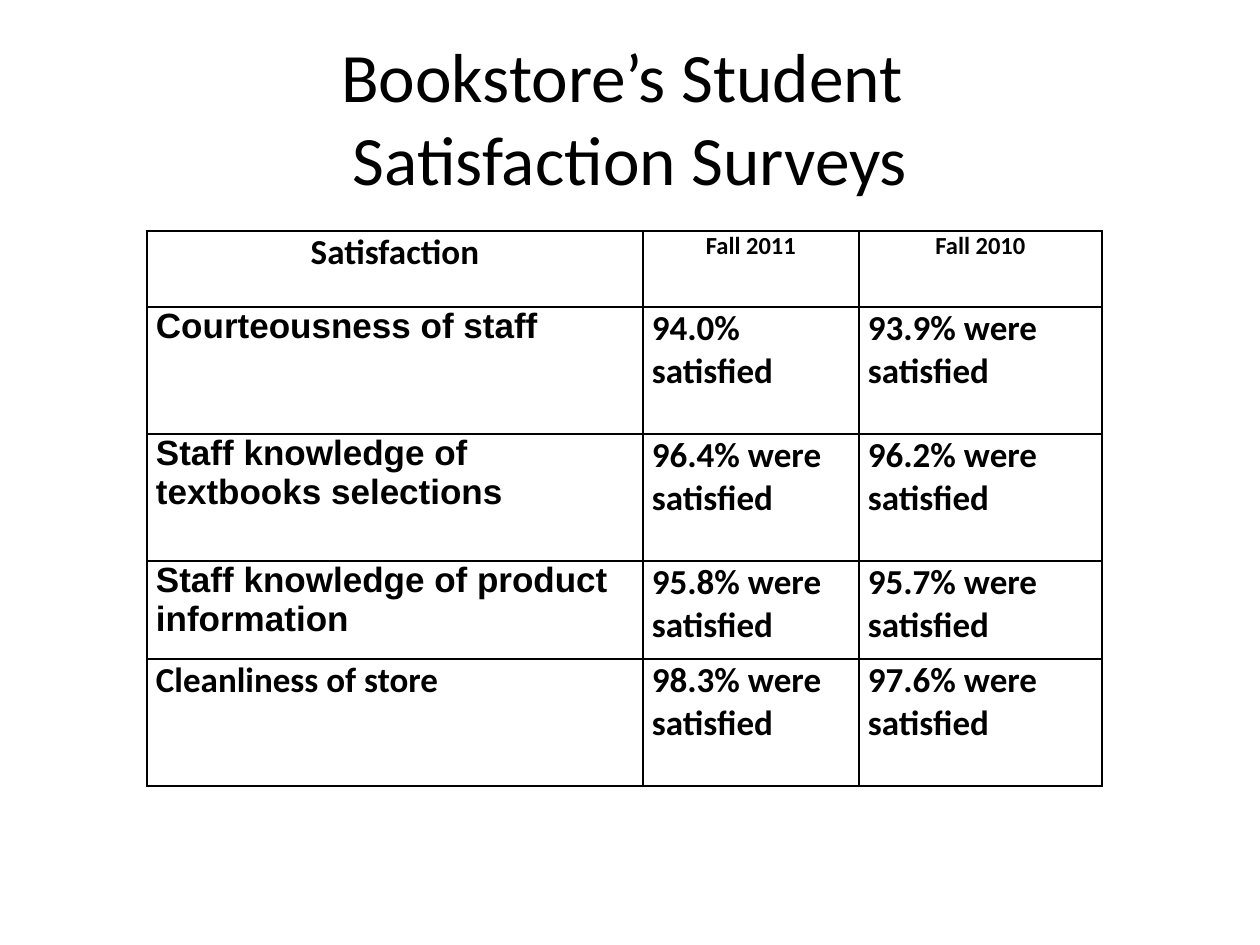
from lxml import etree
from pptx import Presentation, util as u
from pptx.dml.color import RGBColor
from pptx.enum import text as t
from pptx.oxml.ns import qn

# Content
TITLE = "Bookstore’s Student \vSatisfaction Surveys"
HEADER = ("Satisfaction", "Fall 2011", "Fall 2010")
SURVEY = [
    ("Courteousness of staff", "94.0% satisfied", "93.9% were satisfied"),
    ("Staff knowledge of textbooks selections", "96.4% were satisfied", "96.2% were satisfied"),
    ("Staff knowledge of product information", "95.8% were satisfied", "95.7% were satisfied"),
    ("Cleanliness of store", "98.3% were satisfied", "97.6% were satisfied"),
]

# Layout in px, 126 to the inch
PAGE = (1260, 945)
TITLE_BOX = (63, 38, 1134, 157)
TABLE_AT = (147, 231)
COLUMNS = (496, 216, 243)
ROWS = (76, 127, 127, 98, 127)
CELL_MARGINS = {"margin_left": 9, "margin_right": 9, "margin_top": 0, "margin_bottom": 0}
COLORS = {"ink": "000000"}
ARIAL_ROWS = (1, 2, 3)


def px(length):
    return u.Emu(round(length * 914400 / 126))


def style(para, size, font="Calibri", bold=False, align=t.PP_ALIGN.LEFT):
    para.alignment = align
    for span in para.runs:
        for name, value in {"size": u.Pt(size), "name": font, "bold": bold}.items():
            setattr(span.font, name, value)
        span.font.color.rgb = RGBColor.from_string(COLORS["ink"])


def add_borders(cell):
    props = cell._tc.get_or_add_tcPr()
    for position, side in enumerate(("lnL", "lnR", "lnT", "lnB")):
        line = etree.Element(qn(f"a:{side}"), w=str(u.Pt(1)))
        fill = etree.SubElement(line, qn("a:solidFill"))
        etree.SubElement(fill, qn("a:srgbClr"), val=COLORS["ink"])
        props.insert(position, line)


def cell_format(row, column):
    if row == 0:
        return {"size": 14 if column else 20, "align": t.PP_ALIGN.CENTER}
    return {"size": 20, "font": "Arial" if column == 0 and row in ARIAL_ROWS else "Calibri"}


deck = Presentation()
deck.slide_width, deck.slide_height = map(px, PAGE)
page = deck.slides.add_slide(deck.slide_layouts[5])

# Title
title = page.shapes.title
title.left, title.top, title.width, title.height = map(px, TITLE_BOX)
title.text_frame.text = TITLE
title.text_frame.vertical_anchor = t.MSO_ANCHOR.MIDDLE
style(title.text_frame.paragraphs[0], 39.6, align=t.PP_ALIGN.CENTER)

# Survey table
frame = page.shapes.add_table(len(ROWS), len(COLUMNS), *map(px, (*TABLE_AT, sum(COLUMNS), sum(ROWS))))
table = frame.table
table.first_row = table.horz_banding = False
for column, width in zip(table.columns, COLUMNS):
    column.width = px(width)
for row, height in zip(table.rows, ROWS):
    row.height = px(height)

for r, labels in enumerate([HEADER, *SURVEY]):
    for c, label in enumerate(labels):
        cell = table.cell(r, c)
        cell.text = label
        cell.fill.background()
        for name, value in CELL_MARGINS.items():
            setattr(cell, name, px(value))
        add_borders(cell)
        style(cell.text_frame.paragraphs[0], bold=True, **cell_format(r, c))

deck.save("out.pptx")
